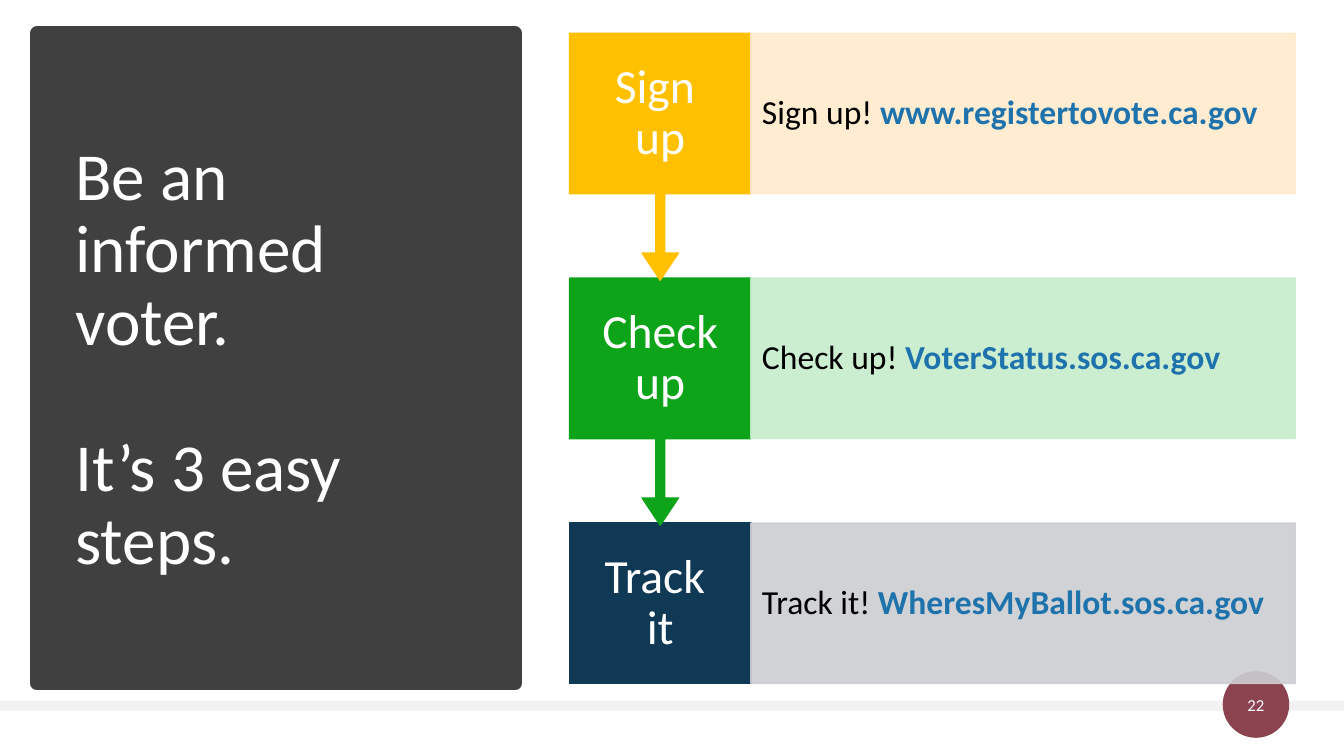
"""Build the slide on three easy steps for an informed voter."""
from dataclasses import dataclass

from lxml import etree
from pptx import Presentation
from pptx import util as u
from pptx.dml.color import RGBColor
from pptx.enum import shapes, text
from pptx.oxml import ns

Pt = u.Pt
WHITE = RGBColor(0xFF, 0xFF, 0xFF)
BLACK = RGBColor(0x00, 0x00, 0x00)
BLUE = RGBColor(0x1E, 0x73, 0xAC)
DARK = RGBColor(0x40, 0x40, 0x40)
PALE = RGBColor(0xF2, 0xF2, 0xF2)
WINE = RGBColor(0x8A, 0x43, 0x4F)
GOLD = RGBColor(0xFF, 0xC0, 0x00)
PEACH = RGBColor(0xFF, 0xEA, 0xCC)
GREEN = RGBColor(0x0D, 0xA4, 0x19)
MINT = RGBColor(0xC7, 0xED, 0xCB)
NAVY = RGBColor(0x0F, 0x39, 0x55)
GREY = RGBColor(0xCC, 0xCE, 0xD1)

KIND = shapes.MSO_SHAPE
LEFT, MID = text.PP_ALIGN.LEFT, text.PP_ALIGN.CENTER
STEP_X, STEP_W = 406.8, 129.6
LINK_W = 388.8
TOP, ROW_H, PITCH = 23.76, 114.5, 174.96
ARROW_H = 176.4


@dataclass
class Box:
    x: float
    y: float
    w: float
    h: float

    def sides(self) -> list:
        return [Pt(n) for n in (self.x, self.y, self.w, self.h)]


@dataclass
class Run:
    words: str
    size: float
    color: RGBColor = WHITE
    bold: bool = False


@dataclass
class Step:
    label: str
    lead: str
    link: str
    deep: RGBColor
    light: RGBColor


STEPS = [
    Step("Sign \vup", "Sign up! ", "www.registertovote.ca.gov", GOLD, PEACH),
    Step("Check up", "Check up! ", "VoterStatus.sos.ca.gov", GREEN, MINT),
    Step("Track \vit", "Track it! ", "WheresMyBallot.sos.ca.gov", NAVY, GREY),
]


def draw(slide, kind, box: Box, color: RGBColor, line: float = 0, alpha: int = 100):
    """Add a filled shape, with a line of the same colour if wanted."""
    shape = slide.shapes.add_shape(kind, *box.sides())
    shape.shadow.inherit = False
    shape.fill.solid()
    shape.fill.fore_color.rgb = color
    if line:
        shape.line.color.rgb = color
        shape.line.width = Pt(line)
    else:
        shape.line.fill.background()
    if alpha < 100:
        for node in shape._element.spPr.iter(ns.qn("a:srgbClr")):
            etree.SubElement(node, ns.qn("a:alpha"), val=str(alpha * 1000))
    return shape


def write(shape, paras: list[list[Run]], align, pad: tuple = (0, 0),
          space: float = 0.9, gap: float = 0) -> None:
    """Fill a shape with paragraphs of styled runs."""
    frame = shape.text_frame
    form = {
        "word_wrap": True, "vertical_anchor": text.MSO_ANCHOR.MIDDLE,
        "margin_left": Pt(pad[0]), "margin_right": Pt(pad[0]),
        "margin_top": Pt(pad[1]), "margin_bottom": Pt(pad[1]),
    }
    for key, value in form.items():
        setattr(frame, key, value)
    for i, runs in enumerate(paras):
        para = frame.add_paragraph() if i else frame.paragraphs[0]
        para.alignment = align
        para.line_spacing = space
        if i:
            para.space_before = Pt(gap)
        for item in runs:
            for j, words in enumerate(item.words.split("\v")):
                if j:
                    para.add_line_break()
                run = para.add_run()
                run.text = words
                run.font.color.rgb = item.color
                style = {"name": "Calibri", "size": Pt(item.size), "bold": item.bold}
                for key, value in style.items():
                    setattr(run.font, key, value)


def add_step(slide, step: Step, row: int) -> None:
    """Draw one step with its label, arrow and link."""
    y = TOP + row * PITCH
    box = Box(STEP_X, y, STEP_W, ROW_H)
    if row < len(STEPS) - 1:
        arrow = draw(slide, KIND.UP_ARROW_CALLOUT,
                     Box(STEP_X, y, STEP_W, ARROW_H), step.deep, 1)
        arrow.rotation = 180
        for i, value in enumerate((0.05, 0.1, 0.15, 0.65)):
            arrow.adjustments[i] = value
        label = slide.shapes.add_textbox(*box.sides())
    else:
        label = draw(slide, KIND.RECTANGLE, box, step.deep, 1)
    write(label, [[Run(step.label, 34)]], MID, (9.2, 18.7))
    panel = draw(slide, KIND.RECTANGLE,
                 Box(STEP_X + STEP_W, y, LINK_W, ROW_H), step.light, 1, 90)
    runs = [Run(step.lead, 24, BLACK), Run(step.link, 24, BLUE, True)]
    write(panel, [runs], LEFT, (7.9, 23.8))


def main() -> None:
    """Build and save the slide."""
    deck = Presentation()
    deck.slide_width, deck.slide_height = Pt(960), Pt(540)
    slide = deck.slides.add_slide(deck.slide_layouts[6])
    draw(slide, KIND.RECTANGLE, Box(0, 500.4, 960, 7.2), PALE)
    badge = draw(slide, KIND.OVAL, Box(873.4, 479.5, 47.5, 47.5), WINE)
    write(badge, [[Run("22", 12)]], MID, space=1.0)
    draw(slide, KIND.RECTANGLE, Box(26.6, 23.8, 341.3, 464.4), DARK, 10)
    title = slide.shapes.add_textbox(*Box(46.8, 50.4, 299.5, 414).sides())
    write(title, [[Run("Be an informed voter.", 48)],
                  [Run("It’s 3 easy steps.", 48)]], LEFT, (7.2, 3.6), gap=52.5)
    for row, step in reversed(list(enumerate(STEPS))):
        add_step(slide, step, row)
    deck.save("out.pptx")


if __name__ == "__main__":
    main()
